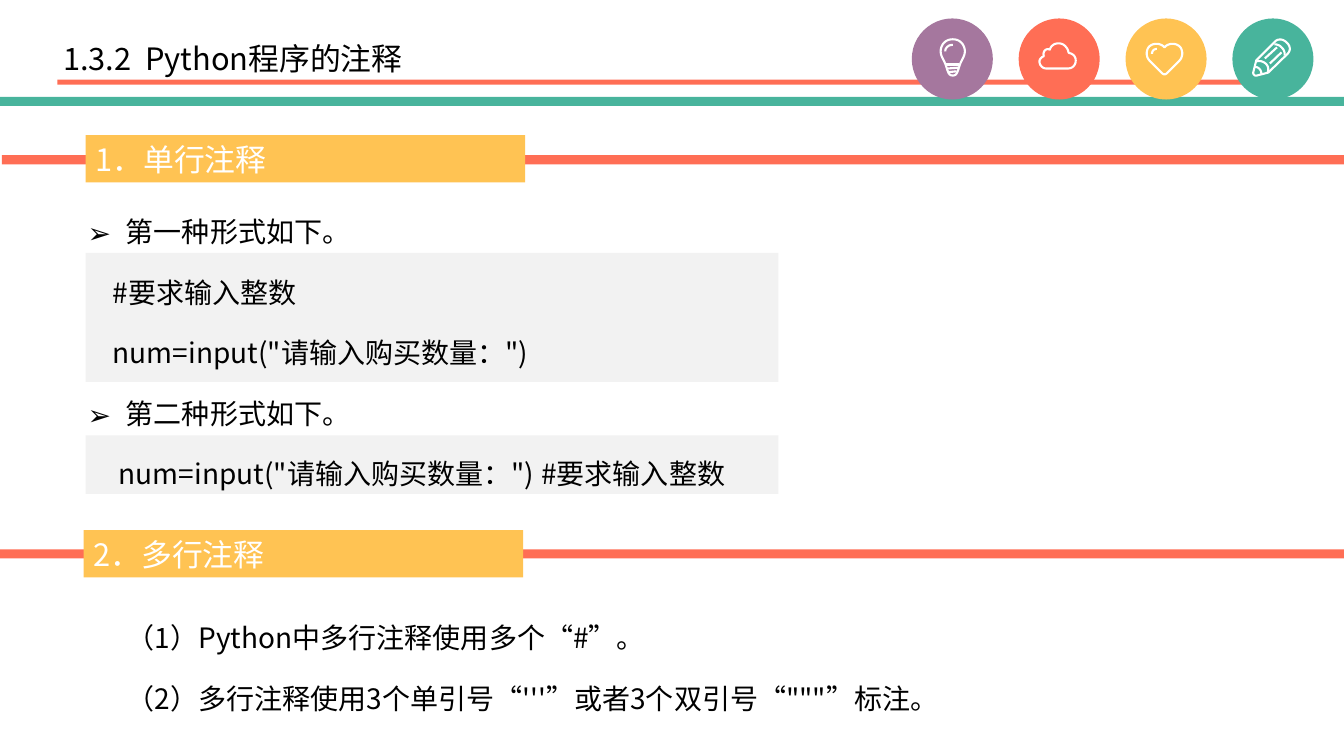
from dataclasses import dataclass

from lxml import etree
from pptx import Presentation
from pptx.dml.color import RGBColor
from pptx.enum.shapes import MSO_SHAPE
from pptx.enum.text import MSO_ANCHOR, PP_ALIGN
from pptx.oxml.ns import qn
from pptx.util import Pt

RECT = MSO_SHAPE.RECTANGLE
OVAL = MSO_SHAPE.OVAL
TOP = MSO_ANCHOR.TOP
MIDDLE = MSO_ANCHOR.MIDDLE
LEFT = PP_ALIGN.LEFT

PX = 9144
ICON_UNITS_PER_PX = 10
CURVE_STEPS = 12
FONT = "Noto Sans CJK SC"
CORAL, TEAL, AMBER, PURPLE = "FF6E55", "48B49C", "FFC353", "A5779E"
WHITE, BLACK, CODE_GREY = "FFFFFF", "000000", "F2F2F2"


@dataclass(frozen=True)
class Box:
    left: int
    top: int
    width: int
    height: int
    color: str = CORAL


@dataclass(frozen=True)
class Line:
    text: str
    indent: int = 0
    bullet: str = ""
    tab: int = 0


@dataclass(frozen=True)
class Badge:
    """A coloured disc with strokes of (x, y) lines and six-number curves."""
    left: int
    color: str
    strokes: tuple


@dataclass(frozen=True)
class Section:
    heading: str
    rule: Box
    banner: Box


HEADER_RULES = (Box(57, 79, 1233, 5), Box(-1, 96, 1334, 9, TEAL))
CODE_PANELS = (Box(85, 432, 687, 58, CODE_GREY), Box(85, 251, 687, 128, CODE_GREY))
SECTIONS = (
    Section("1．单行注释", Box(2, 154, 1333, 9), Box(85, 134, 436, 47, AMBER)),
    Section("2．多行注释", Box(0, 545, 1333, 9), Box(83, 526, 436, 47, AMBER)),
)
SINGLE_LINE_NOTES = (
    Line("第一种形式如下。", 38, "➢"),
    Line("#要求输入整数", 25),
    Line('num=input("请输入购买数量：")', 25),
    Line("第二种形式如下。", 38, "➢"),
    Line('num=input("请输入购买数量：")\t#要求输入整数', 31, tab=493),
)
MULTI_LINE_NOTES = (
    Line("（1）Python中多行注释使用多个“#”。"),
    Line("（2）多行注释使用3个单引号“'''”或者3个双引号“\"\"\"”标注。"),
)

BULB = (
    ((400, 200), (472, 200, 520, 254, 520, 320), (520, 370, 480, 415, 465, 470),
     (445, 530, 440, 560, 400, 560), (360, 560, 355, 530, 335, 470),
     (320, 415, 280, 370, 280, 320), (280, 254, 328, 200, 400, 200)),
    ((335, 450), (465, 450)),
    ((348, 490), (452, 482)),
    ((362, 526), (438, 518)),
    ((325, 320), (325, 285, 355, 255, 400, 255)),
)
CLOUD = (
    ((480, 490), (530, 490, 560, 455, 560, 410), (560, 370, 530, 340, 490, 335),
     (480, 280, 440, 240, 390, 240), (350, 240, 315, 262, 303, 302),
     (265, 285, 230, 320, 243, 368), (215, 380, 200, 400, 200, 420),
     (200, 460, 235, 490, 270, 490), (480, 490)),
)
HEART = (
    ((380, 280), (420, 235, 485, 235, 530, 270), (565, 310, 565, 370, 530, 410),
     (400, 540), (390, 550, 370, 550, 360, 540), (230, 410),
     (195, 370, 195, 310, 230, 270), (275, 235, 340, 235, 380, 280)),
    ((255, 345), (255, 315, 275, 295, 305, 295)),
)
PENCIL = (
    ((530, 230), (500, 200, 450, 190, 420, 220), (230, 410), (200, 530),
     (200, 550, 215, 565, 235, 560), (350, 530), (540, 345),
     (575, 310, 570, 265, 530, 230)),
    ((410, 250), (460, 245, 520, 300, 510, 360)),
    ((230, 420), (290, 400, 370, 450, 345, 525)),
    ((315, 390), (435, 280)),
    ((365, 440), (480, 330)),
    ((215, 475), (250, 470, 285, 510, 280, 545)),
)
BADGES = (
    Badge(905, PURPLE, BULB),
    Badge(1011, CORAL, CLOUD),
    Badge(1117, AMBER, HEART),
    Badge(1223, TEAL, PENCIL),
)
BADGE_TOP, BADGE_SIZE = 19, 79


def rgb(color: str) -> RGBColor:
    return RGBColor.from_string(color)


def add_block(slide, box: Box, preset=RECT):
    block = slide.shapes.add_shape(
        preset, box.left * PX, box.top * PX, box.width * PX, box.height * PX)
    block.shadow.inherit = False
    block.fill.solid()
    block.fill.fore_color.rgb = rgb(box.color)
    block.line.fill.background()
    return block


def trace(stroke: tuple) -> list:
    points = [stroke[0]]
    for segment in stroke[1:]:
        if len(segment) == 2:
            points.append(segment)
            continue
        start = points[-1]
        controls = (start, segment[:2], segment[2:4], segment[4:])
        for step in range(1, CURVE_STEPS + 1):
            t = step / CURVE_STEPS
            weights = ((1 - t) ** 3, 3 * t * (1 - t) ** 2, 3 * t * t * (1 - t), t ** 3)
            points.append(tuple(
                round(sum(w * point[axis] for w, point in zip(weights, controls)))
                for axis in (0, 1)))
    return points


def add_badge(slide, badge: Badge) -> None:
    disc = add_block(
        slide, Box(badge.left, BADGE_TOP, BADGE_SIZE, BADGE_SIZE, badge.color), OVAL)
    disc.line.color.rgb = rgb(badge.color)
    disc.line.width = Pt(1)
    for stroke in badge.strokes:
        points = trace(stroke)
        builder = slide.shapes.build_freeform(*points[0], scale=PX / ICON_UNITS_PER_PX)
        builder.add_line_segments(points[1:], close=points[0] == points[-1])
        outline = builder.convert_to_shape(badge.left * PX, BADGE_TOP * PX)
        outline.shadow.inherit = False
        outline.fill.background()
        outline.line.color.rgb = rgb(WHITE)
        outline.line.width = Pt(1.5)


def format_paragraph(paragraph, size: int, color: str) -> None:
    paragraph.alignment = LEFT
    for run in paragraph.runs:
        run.font.size = Pt(size)
        run.font.name = FONT
        run.font.color.rgb = rgb(color)
        etree.SubElement(run.font._element, qn("a:ea"), typeface=FONT)


def add_text_box(slide, box: Box, anchor=TOP):
    frame = slide.shapes.add_textbox(
        box.left * PX, box.top * PX, box.width * PX, box.height * PX).text_frame
    frame.word_wrap = True
    frame.vertical_anchor = anchor
    return frame


def add_notes_text(slide, box: Box, lines: tuple) -> None:
    frame = add_text_box(slide, box)
    frame.text = "\n".join(line.text for line in lines)
    for paragraph, line in zip(frame.paragraphs, lines):
        format_paragraph(paragraph, 20, BLACK)
        paragraph.line_spacing = 1.3
        paragraph.space_before = paragraph.space_after = Pt(6)
        properties = paragraph._p.get_or_add_pPr()
        hanging = bool(line.bullet)
        properties.set("marL", str(line.indent * PX if hanging else 0))
        properties.set("indent", str(line.indent * PX * (-1 if hanging else 1)))
        if hanging:
            etree.SubElement(properties, qn("a:buFont"), typeface=FONT)
            etree.SubElement(properties, qn("a:buChar"), char=line.bullet)
        if line.tab:
            stops = etree.SubElement(properties, qn("a:tabLst"))
            etree.SubElement(stops, qn("a:tab"), pos=str(line.tab * PX), algn="l")


def add_section(slide, section: Section) -> None:
    add_block(slide, section.rule)
    frame = add_block(slide, section.banner).text_frame
    frame.text = section.heading
    frame.vertical_anchor = MIDDLE
    format_paragraph(frame.paragraphs[0], 22, WHITE)


def main() -> None:
    """Build the slide on Python comments."""
    deck = Presentation()
    deck.slide_width, deck.slide_height = 1333 * PX, 750 * PX
    slide = deck.slides.add_slide(deck.slide_layouts[6])
    for rule in HEADER_RULES:
        add_block(slide, rule)
    for badge in BADGES:
        add_badge(slide, badge)
    for panel in CODE_PANELS:
        add_block(slide, panel)
    title = add_text_box(slide, Box(53, 36, 756, 48), MIDDLE)
    title.text = "1.3.2  Python程序的注释"
    title.paragraphs[0].line_spacing = 0.9
    format_paragraph(title.paragraphs[0], 22, BLACK)
    add_notes_text(slide, Box(77, 198, 1219, 292), SINGLE_LINE_NOTES)
    for section in SECTIONS:
        add_section(slide, section)
    add_notes_text(slide, Box(116, 601, 1219, 110), MULTI_LINE_NOTES)
    deck.save("out.pptx")


if __name__ == "__main__":
    main()
